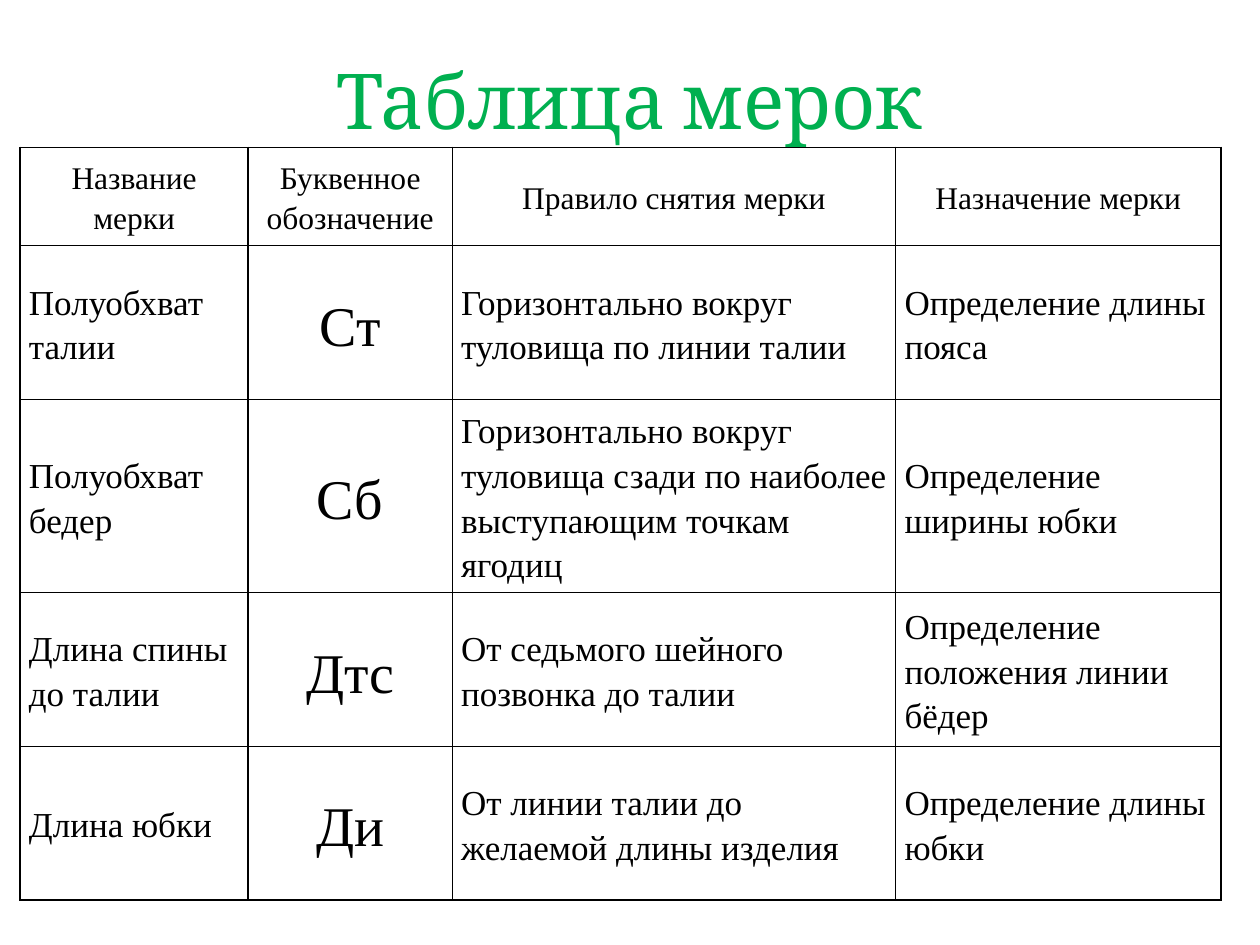
from dataclasses import dataclass

from lxml.etree import SubElement
from pptx import Presentation
from pptx.dml.color import RGBColor
from pptx.enum.text import MSO_ANCHOR, PP_ALIGN
from pptx.oxml.ns import qn
from pptx.util import Inches, Pt


@dataclass(frozen=True)
class Theme:
    title_font: str = "Cambria"
    body_font: str = "Times New Roman"
    title_color: str = "00B050"
    text_color: str = "000000"
    border_color: str = "000000"
    title_size: int = 44
    header_size: int = 18
    body_size: int = 20
    symbol_size: int = 32
    border_width: int = 1
    line_spacing: float = 1.15


COL_WIDTHS = [1.81, 1.62, 3.52, 2.58]
ROW_HEIGHTS = [0.78, 1.22, 1.32, 1.22, 1.22]
SYMBOL_COL = 1
MEASUREMENTS = [
    ["Название мерки", "Буквенное обозначение", "Правило снятия мерки", "Назначение мерки"],
    ["Полуобхват талии", "Ст", "Горизонтально вокруг туловища по линии талии",
     "Определение длины пояса"],
    ["Полуобхват\nбедер", "Сб",
     "Горизонтально вокруг туловища сзади по наиболее выступающим точкам ягодиц",
     "Определение ширины юбки"],
    ["Длина спины до талии", "Дтс", "От седьмого шейного позвонка до талии",
     "Определение положения линии бёдер"],
    ["Длина юбки", "Ди", "От линии талии до желаемой длины изделия",
     "Определение длины юбки"],
]


class SlideBuilder:
    def __init__(self, slide, theme):
        self.slide = slide
        self.theme = theme

    def format_text(self, tf, font, size, color, align):
        for p in tf.paragraphs:
            p.alignment = align
            for r in p.runs:
                r.font.name = font
                r.font.size = Pt(size)
                r.font.color.rgb = RGBColor.from_string(color)

    def title(self, text, left, top, width, height):
        t = self.theme
        box = self.slide.shapes.add_textbox(
            Inches(left), Inches(top), Inches(width), Inches(height))
        tf = box.text_frame
        tf.word_wrap = True
        tf.vertical_anchor = MSO_ANCHOR.MIDDLE
        tf.text = text
        self.format_text(tf, t.title_font, t.title_size, t.title_color, PP_ALIGN.CENTER)

    def borders(self, cell):
        tc_pr = cell._tc.get_or_add_tcPr()
        for side in ("lnL", "lnR", "lnT", "lnB"):
            ln = SubElement(tc_pr, qn(f"a:{side}"), w=str(Pt(self.theme.border_width)))
            fill = SubElement(ln, qn("a:solidFill"))
            SubElement(fill, qn("a:srgbClr"), val=self.theme.border_color)

    def cell(self, cell, text, size, align):
        t = self.theme
        cell.text = text
        cell.vertical_anchor = MSO_ANCHOR.MIDDLE
        cell.margin_left = cell.margin_right = Inches(0.07)
        cell.margin_top = cell.margin_bottom = 0
        self.format_text(cell.text_frame, t.body_font, size, t.text_color, align)
        for p in cell.text_frame.paragraphs:
            p.line_spacing = t.line_spacing
        self.borders(cell)
        cell.fill.background()

    def table(self, rows, left, top, widths, heights):
        t = self.theme
        table = self.slide.shapes.add_table(
            len(rows), len(widths), Inches(left), Inches(top),
            Inches(sum(widths)), Inches(sum(heights))).table
        table.first_row = table.horz_banding = False
        for col, width in zip(table.columns, widths):
            col.width = Inches(width)
        for row, height in zip(table.rows, heights):
            row.height = Inches(height)
        for i, row in enumerate(rows):
            for j, text in enumerate(row):
                size, align = t.body_size, PP_ALIGN.LEFT
                if i == 0:
                    size, align = t.header_size, PP_ALIGN.CENTER
                elif j == SYMBOL_COL:
                    size, align = t.symbol_size, PP_ALIGN.CENTER
                self.cell(table.cell(i, j), text, size, align)


def main():
    prs = Presentation()
    prs.slide_width = Inches(10)
    prs.slide_height = Inches(7.5)
    s = SlideBuilder(prs.slides.add_slide(prs.slide_layouts[6]), Theme())
    s.title("Таблица мерок", 0.5, 0.16, 9, 1.25)
    s.table(MEASUREMENTS, 0.16, 1.17, COL_WIDTHS, ROW_HEIGHTS)
    prs.save("out.pptx")


if __name__ == "__main__":
    main()
